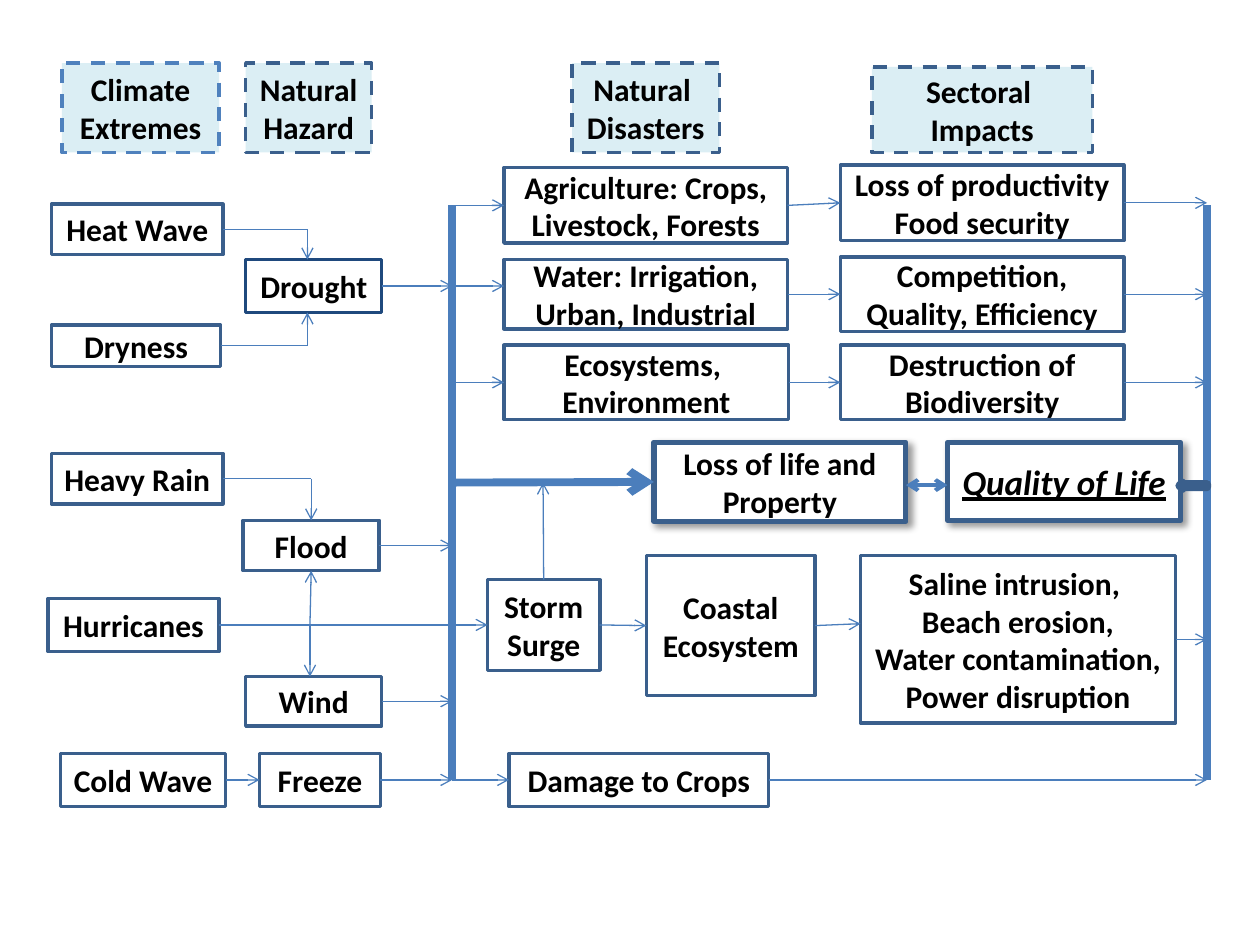
from dataclasses import dataclass
from itertools import pairwise

from lxml import etree
from pptx import Presentation
from pptx import util as u
from pptx.dml.color import RGBColor
from pptx.enum import dml, shapes, text
from pptx.oxml import ns

TOP, LEFT, RIGHT, BOTTOM = 0, 1, 3, 2
SOURCE_RAIL, IMPACT_RAIL = 3.59, 9.58
RAIL_TOP, RAIL_BOTTOM = 1.63, 6.19


@dataclass(frozen=True)
class Theme:
    """Hold the colours, type and line widths of the slide."""
    font: str = "Calibri"
    ink: str = "000000"
    paper: str = "FFFFFF"
    heading_fill: str = "DBEEF4"
    accent: str = "4F81BD"
    outline: str = "3A5F8C"
    dark_outline: str = "1F497D"
    link: str = "4B7EBC"
    body_size: float = 18
    key_size: float = 20
    thin: float = 0.75
    border: float = 2
    dashed: float = 2.25
    key_border: float = 3
    thick: float = 4.5


THEME = Theme()

HEADINGS = {
    "Climate Extremes": (0.49, 0.5, 1.25, 0.71),
    "Natural\nHazard": (1.95, 0.5, 1, 0.71),
    "Natural \nDisasters": (4.54, 0.5, 1.17, 0.71),
    "Sectoral \nImpacts": (6.92, 0.53, 1.75, 0.68),
}

BOXES = {
    "Heat Wave": (0.41, 1.62, 1.36, 0.4),
    "Dryness": (0.41, 2.58, 1.34, 0.33),
    "Heavy Rain": (0.41, 3.6, 1.36, 0.4),
    "Hurricanes": (0.38, 4.75, 1.36, 0.42),
    "Cold Wave": (0.48, 5.98, 1.31, 0.42),
    "Drought": (1.95, 2.06, 1.08, 0.42),
    "Flood": (1.93, 4.13, 1.08, 0.4),
    "Wind": (1.95, 5.37, 1.08, 0.39),
    "Freeze": (2.06, 5.98, 0.96, 0.42),
    "Agriculture: Crops, Livestock, Forests": (4, 1.33, 2.25, 0.6),
    "Water: Irrigation, Urban, Industrial": (4, 2.06, 2.25, 0.55),
    "Ecosystems, \nEnvironment": (4, 2.74, 2.26, 0.59),
    "Storm\nSurge": (3.87, 4.6, 0.89, 0.72),
    "Coastal\nEcosystem": (5.13, 4.41, 1.34, 1.11),
    "Damage to Crops": (4.04, 5.98, 2.06, 0.42),
    "Loss of productivity\nFood security": (6.67, 1.31, 2.25, 0.6),
    "Competition, Quality, Efficiency": (6.67, 2.04, 2.25, 0.59),
    "Destruction of Biodiversity": (6.67, 2.74, 2.25, 0.59),
    "Saline intrusion, \nBeach erosion,\nWater contamination,\nPower disruption":
        (6.83, 4.41, 2.5, 1.33),
}

KEY_BOXES = {
    "Loss of life and\nProperty": (5.19, 3.51, 2, 0.63),
    "Quality of Life": (7.52, 3.51, 1.85, 0.62),
}


def color(value):
    """Return a colour from its hex value."""
    return RGBColor.from_string(value)


def add_box(page, words, place, fill=THEME.paper, outline=THEME.outline, width=THEME.border):
    """Add a rectangle with centred bold text, one paragraph a line."""
    box = page.shapes.add_shape(shapes.MSO_SHAPE.RECTANGLE, *map(u.Inches, place))
    box.shadow.inherit = False
    box.fill.solid()
    box.fill.fore_color.rgb = color(fill)
    box.line.color.rgb = color(outline)
    box.line.width = u.Pt(width)
    frame = box.text_frame
    frame.word_wrap = True
    frame.vertical_anchor = text.MSO_ANCHOR.MIDDLE
    frame.text = words
    for para in frame.paragraphs:
        para.alignment = text.PP_ALIGN.CENTER
        para.font.name = THEME.font
        para.font.size = u.Pt(THEME.body_size)
        para.font.bold = True
        para.font.color.rgb = color(THEME.ink)
    return box


def add_heading(page, words, place):
    """Add a tinted column heading with a dashed outline."""
    box = add_box(page, words, place, fill=THEME.heading_fill)
    box.line.dash_style = dml.MSO_LINE.DASH
    return box


def add_key_box(page, words, place):
    """Add a heavily outlined box with a soft shadow."""
    box = add_box(page, words, place, width=THEME.key_border)
    effects = box._element.spPr.find(ns.qn("a:effectLst"))
    shadow = etree.SubElement(effects, ns.qn("a:outerShdw"), blurRad=str(u.Pt(4)),
                              dist=str(u.Pt(3)), dir="2700000", algn="tl", rotWithShape="0")
    tint = etree.SubElement(shadow, ns.qn("a:srgbClr"), val=THEME.ink)
    etree.SubElement(tint, ns.qn("a:alpha"), val="40000")
    return box


def add_link(page, start, end, width=THEME.thin, arrows=("tailEnd",), dash=None):
    """Add a straight line; each end is a point or a (box, side) pair."""
    joined = [not isinstance(stop[0], (int, float)) for stop in (start, end)]
    points = [(0, 0) if is_box else stop for stop, is_box in zip((start, end), joined)]
    link = page.shapes.add_connector(
        shapes.MSO_CONNECTOR.STRAIGHT, *(u.Inches(value) for point in points for value in point))
    if joined[0]:
        link.begin_connect(*start)
    if joined[1]:
        link.end_connect(*end)
    link.line.color.rgb = color(THEME.link)
    link.line.width = u.Pt(width)
    if dash:
        link.line.dash_style = dash
    for arrow in arrows:
        etree.SubElement(link.line._get_or_add_ln(), ns.qn(f"a:{arrow}"), type="arrow")
    etree.SubElement(link._element.spPr, ns.qn("a:effectLst"))
    return link


def add_rail(page, x, stops):
    """Add a thick vertical rail in segments between the stops."""
    for top, bottom in pairwise(stops):
        add_link(page, (x, top), (x, bottom), THEME.thick, arrows=())


def add_quality_arrow(page):
    """Add the short block arrow from the impact rail to quality of life."""
    arrow = page.shapes.add_shape(
        shapes.MSO_SHAPE.LEFT_ARROW, *map(u.Inches, (9.36, 3.83, 0.22, 0.05)))
    arrow.shadow.inherit = False
    arrow.fill.solid()
    arrow.fill.fore_color.rgb = color(THEME.accent)
    arrow.line.color.rgb = color(THEME.outline)
    arrow.line.width = u.Pt(THEME.thick)


def middle(box):
    """Return the height of a box's centre in inches."""
    return u.Emu(box.top + box.height // 2).inches


def add_hazard_links(page, box):
    """Link climate extremes to hazards, and hazards to the source rail."""
    for source, x, end in (("Heat Wave", 2.44, (2.44, 2.06)),
                           ("Dryness", 2.44, (2.44, 2.48)),
                           ("Heavy Rain", 2.47, (box["Flood"], TOP))):
        corner = (x, middle(box[source]))
        add_link(page, (box[source], RIGHT), corner, arrows=())
        add_link(page, corner, end)
    for end in ((box["Flood"], BOTTOM), (2.46, 5.37)):
        add_link(page, (2.46, middle(box["Hurricanes"])), end)
    for hazard in ("Drought", "Flood", "Wind", "Freeze"):
        add_link(page, (box[hazard], RIGHT), (SOURCE_RAIL, middle(box[hazard])))


def add_impact_links(page, box):
    """Link the rails, disasters and sectoral impacts."""
    agriculture, water, ecosystems, surge, coastal, crops = list(BOXES)[9:15]
    productivity, competition, biodiversity, saline = list(BOXES)[15:]
    loss = list(KEY_BOXES)[0]
    for source, target in (("Cold Wave", "Freeze"), ("Hurricanes", surge), (surge, coastal),
                           (agriculture, productivity), (water, competition),
                           (ecosystems, biodiversity)):
        add_link(page, (box[source], RIGHT), (box[target], LEFT))
    for disaster in (agriculture, ecosystems, crops):
        add_link(page, (SOURCE_RAIL, middle(box[disaster])), (box[disaster], LEFT))
    for impact in (productivity, competition, biodiversity, saline, crops):
        add_link(page, (box[impact], RIGHT), (IMPACT_RAIL, middle(box[impact])))
    add_link(page, (SOURCE_RAIL, 2.27), (4, 2.27))
    add_link(page, (box[coastal], RIGHT), (6.83, 4.95))
    add_link(page, (box[surge], TOP), (4.31, 3.83))
    add_link(page, (SOURCE_RAIL, 3.83), (box[loss], LEFT), THEME.thick)
    add_link(page, (7.19, 3.85), (7.52, 3.85), THEME.dashed,
             ("headEnd", "tailEnd"), dml.MSO_LINE.LONG_DASH)


def main():
    """Build the climate impact flow slide."""
    deck = Presentation()
    deck.slide_width, deck.slide_height = u.Inches(10), u.Inches(7.5)
    page = deck.slides.add_slide(deck.slide_layouts[6])
    box = {}
    for group, add in ((HEADINGS, add_heading), (BOXES, add_box), (KEY_BOXES, add_key_box)):
        box.update({words: add(page, words, place) for words, place in group.items()})
    box["Climate Extremes"].line.color.rgb = color(THEME.accent)
    box["Drought"].line.color.rgb = color(THEME.dark_outline)
    quality = box["Quality of Life"].text_frame.paragraphs[0].font
    quality.size = u.Pt(THEME.key_size)
    quality.italic = quality.underline = True
    add_rail(page, SOURCE_RAIL, (RAIL_TOP, 3.04, 3.83, RAIL_BOTTOM))
    add_rail(page, IMPACT_RAIL, (RAIL_TOP, 3.85, 5.19, RAIL_BOTTOM))
    add_hazard_links(page, box)
    add_impact_links(page, box)
    add_quality_arrow(page)
    deck.save("out.pptx")


if __name__ == "__main__":
    main()
